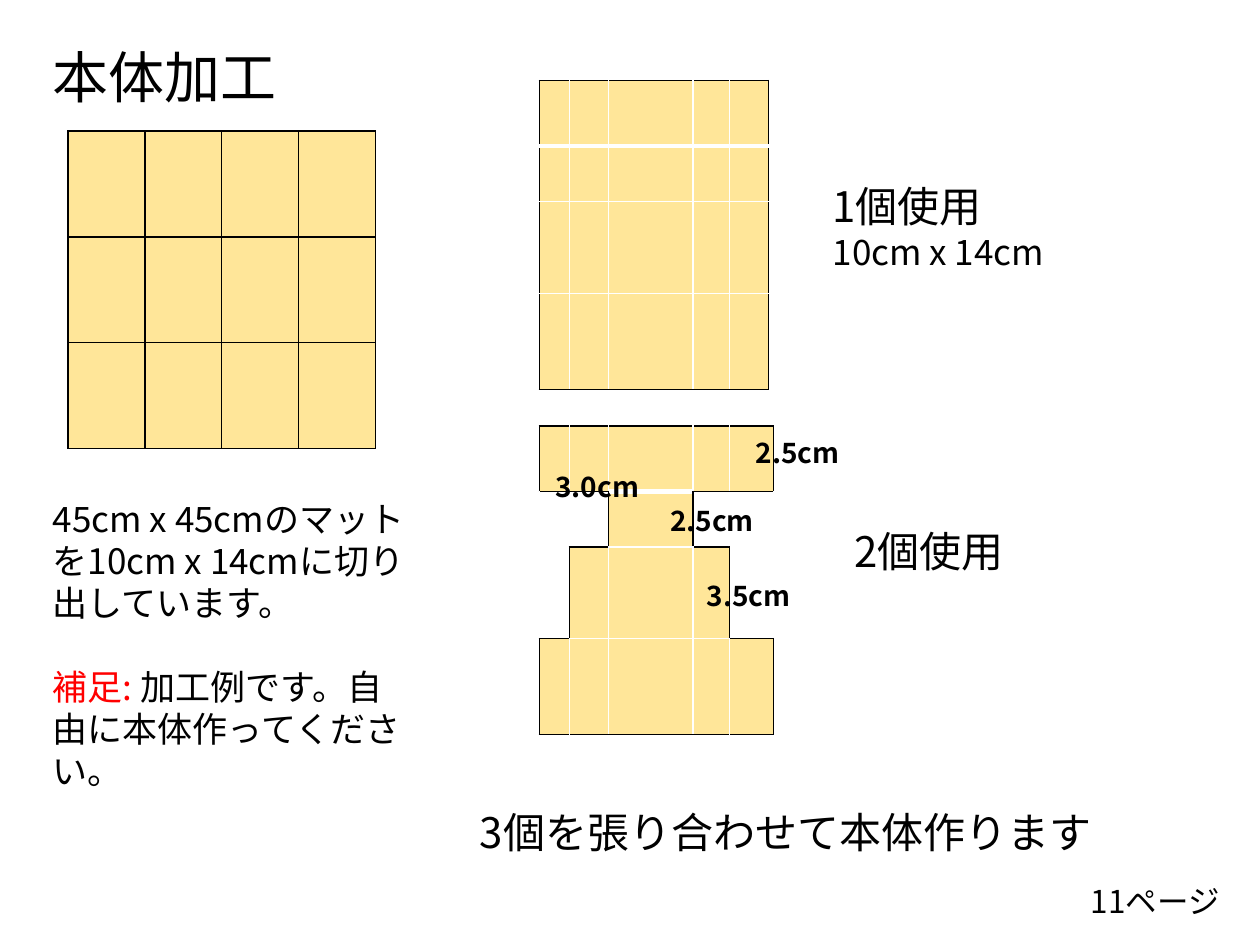
from lxml import etree
from pptx import Presentation
from pptx.dml.color import RGBColor
from pptx.enum.text import MSO_ANCHOR, PP_ALIGN
from pptx.oxml.ns import qn
from pptx.util import Inches, Pt

LEFT = PP_ALIGN.LEFT
MIDDLE = MSO_ANCHOR.MIDDLE

BLACK = RGBColor(0, 0, 0)
WHITE = RGBColor(0xFF, 0xFF, 0xFF)
RED = RGBColor(0xFF, 0, 0)
MAT = RGBColor(0xFF, 0xE6, 0x99)

FONT = "Noto Sans CJK JP"
LINE_HEIGHT = 1.2  # line pitch relative to text size

PIECE_ROWS = [0.52, 0.44, 0.73, 0.76]
# 1 = mat, 0 = cut away
WHOLE_PIECE = [[1] * 5 for _ in PIECE_ROWS]
CUT_PIECE = [
    [1, 1, 1, 1, 1],
    [0, 0, 1, 0, 0],
    [0, 1, 1, 1, 0],
    [1, 1, 1, 1, 1],
]


def add_run(paragraph, text, size, color=BLACK, bold=False):
    run = paragraph.add_run()
    run.text = text
    run.font.size = Pt(size)
    run.font.bold = bold
    run.font.color.rgb = color
    run.font.name = FONT
    etree.SubElement(run.font._element, qn("a:ea"), typeface=FONT)


def add_title(slide, text):
    title = slide.shapes.title
    title.left, title.top = Inches(0.32), Inches(0.36)
    title.width, title.height = Inches(8.62), Inches(0.55)
    title.text_frame.vertical_anchor = MIDDLE
    paragraph = title.text_frame.paragraphs[0]
    paragraph.alignment = LEFT
    paragraph.line_spacing = 0.9
    add_run(paragraph, text, 32)


def add_text(slide, left, top, width, height, lines, gap=0, bold=False):
    """Each line is (size, [(text, color), ...]); gap is points between lines."""
    box = slide.shapes.add_textbox(
        Inches(left), Inches(top), Inches(width), Inches(height))
    frame = box.text_frame
    frame.word_wrap = True
    frame.margin_top = Inches(0.07)
    for index, (size, runs) in enumerate(lines):
        paragraph = frame.add_paragraph() if index else frame.paragraphs[0]
        paragraph.line_spacing = Pt(size * LINE_HEIGHT)
        if index:
            paragraph.space_before = Pt(gap)
        for text, color in runs:
            add_run(paragraph, text, size, color, bold)


def set_border(cell, side, color, width):
    line = etree.SubElement(
        cell._tc.get_or_add_tcPr(), qn("a:ln" + side), w=str(Pt(width)))
    fill = etree.SubElement(line, qn("a:solidFill"))
    etree.SubElement(fill, qn("a:srgbClr"), val=str(color))


def add_grid(slide, left, top, widths, heights, mask, inner, fold=1):
    """Black outline around the mat; inner lines between cells of one kind.

    fold is the width of the inner line below the first row.
    """
    grid = slide.shapes.add_table(
        len(heights), len(widths), Inches(left), Inches(top),
        Inches(sum(widths)), Inches(sum(heights))).table
    grid.first_row = grid.horz_banding = False
    for column, width in zip(grid.columns, widths):
        column.width = Inches(width)
    for row, height in zip(grid.rows, heights):
        row.height = Inches(height)

    def is_mat(r, c):
        inside = 0 <= r < len(heights) and 0 <= c < len(widths)
        return bool(inside and mask[r][c])

    for r in range(len(heights)):
        for c in range(len(widths)):
            cell = grid.cell(r, c)
            cell.margin_left = cell.margin_right = 0
            cell.margin_top = cell.margin_bottom = 0
            neighbours = {"L": (r, c - 1), "R": (r, c + 1),
                          "T": (r - 1, c), "B": (r + 1, c)}
            for side, neighbour in neighbours.items():
                outline = is_mat(r, c) != is_mat(*neighbour)
                on_fold = (r, side) in ((0, "B"), (1, "T"))
                set_border(cell, side, BLACK if outline else inner,
                           fold if on_fold and not outline else 1)
            cell.fill.solid()
            cell.fill.fore_color.rgb = MAT if is_mat(r, c) else WHITE


def main():
    prs = Presentation()
    prs.slide_width, prs.slide_height = Inches(10), Inches(7.5)
    slide = prs.slides.add_slide(prs.slide_layouts[5])

    add_title(slide, "本体加工")
    add_text(slide, 8.56, 6.93, 1.44, 0.4, [(18, [("11ページ", BLACK)])])

    # Mat cut into twelve pieces, with its explanation
    add_grid(slide, 0.54, 1.04, [0.61] * 4, [0.84] * 3, [[1] * 4] * 3, BLACK)
    add_text(slide, 0.32, 3.88, 3.06, 2.46, [
        (20, [("45cm x 45cmのマットを10cm x 14cmに切り出しています。", BLACK)]),
        (20, [("補足: ", RED),
              ("加工例です。自由に本体作ってください。", BLACK)]),
    ], gap=24)

    # Cut piece below, whole piece above
    add_grid(slide, 4.28, 3.38, [0.24, 0.31, 0.67, 0.29, 0.35], PIECE_ROWS,
             CUT_PIECE, WHITE, fold=3)
    add_grid(slide, 4.28, 0.64, [0.24, 0.31, 0.67, 0.29, 0.31], PIECE_ROWS,
             WHOLE_PIECE, WHITE, fold=3)

    # How many of each piece
    add_text(slide, 6.51, 1.36, 2.44, 1.25, [
        (24, [("1個使用", BLACK)]), (20, [("10cm x 14cm", BLACK)])])
    add_text(slide, 6.68, 4.1, 1.55, 0.5, [(24, [("2個使用", BLACK)])])
    add_text(slide, 3.71, 6.33, 5.6, 0.5,
             [(24, [("3個を張り合わせて本体作ります", BLACK)])])

    # Dimensions of the cut piece
    for left, top, length in [(5.9, 3.39, "2.5cm"), (5.22, 3.93, "2.5cm"),
                              (4.31, 3.66, "3.0cm"), (5.51, 4.52, "3.5cm")]:
        add_text(slide, left, top, 1.03, 0.37,
                 [(16, [(length, BLACK)])], bold=True)

    prs.save("out.pptx")


if __name__ == "__main__":
    main()
